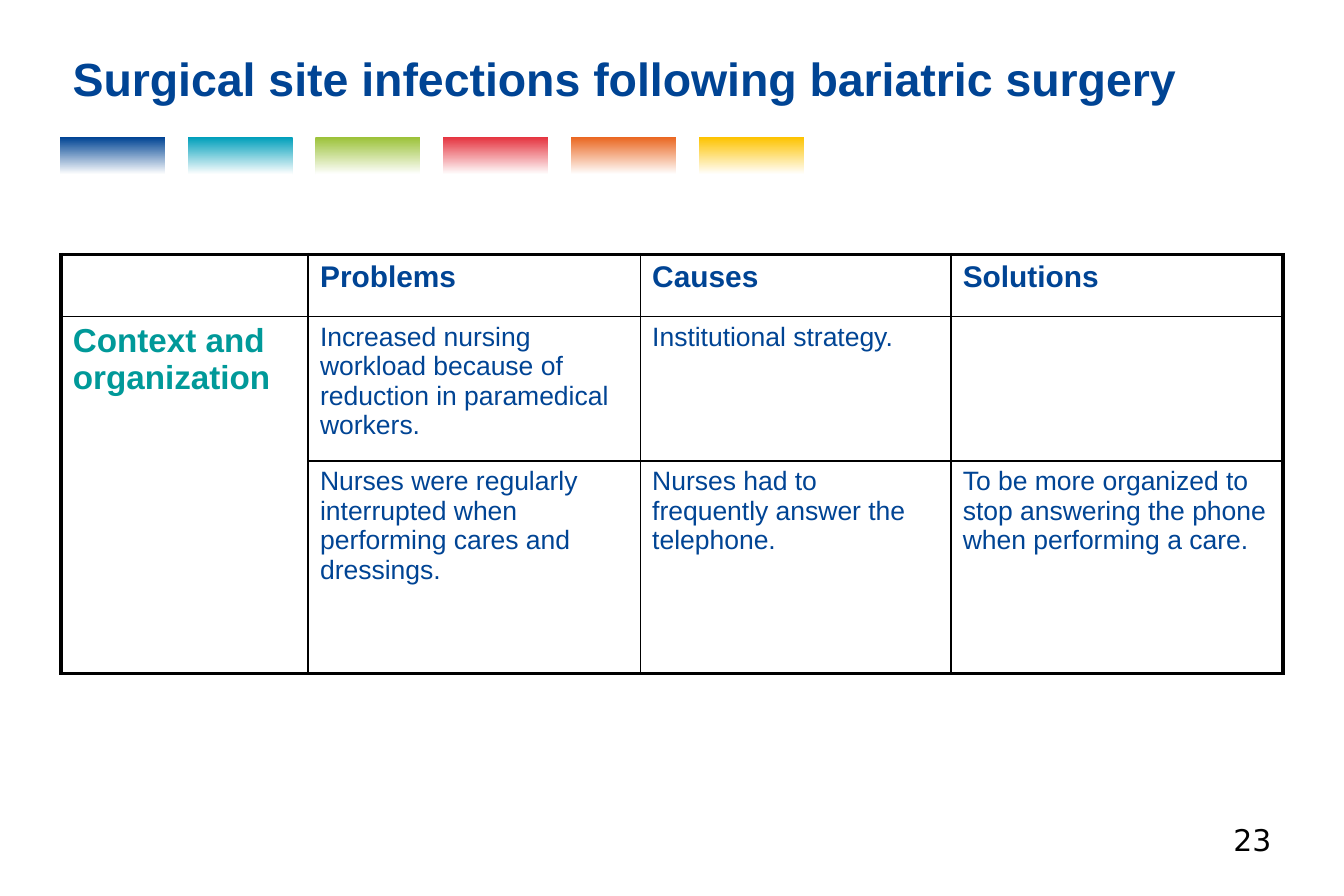
from lxml import etree
from pptx import Presentation
from pptx import util as u
from pptx.dml.color import RGBColor
from pptx.enum import shapes, text
from pptx.oxml import ns

PX = 9144

NAVY = RGBColor(0x00, 0x44, 0x94)
TEAL = RGBColor(0x00, 0x99, 0x99)
CYAN = RGBColor(0x00, 0x9F, 0xBB)
GREEN = RGBColor(0x9C, 0xC2, 0x39)
RED = RGBColor(0xE5, 0x35, 0x40)
ORANGE = RGBColor(0xEA, 0x67, 0x21)
YELLOW = RGBColor(0xFD, 0xC3, 0x00)
BLACK = RGBColor(0, 0, 0)
WHITE = RGBColor(0xFF, 0xFF, 0xFF)

COL_WIDTHS = [207, 278, 260, 278]
ROW_HEIGHTS = [52, 121, 178]
ROWS = [
    ["", "Problems", "Causes", "Solutions"],
    ["Context and organization",
     "Increased nursing workload because of reduction in paramedical workers.",
     "Institutional strategy.",
     ""],
    ["",
     "Nurses were regularly interrupted when performing cares and dressings.",
     "Nurses had to frequently answer the telephone.",
     "To be more organized to stop answering the phone when performing a care."],
]


def px(*lengths):
    return [u.Emu(n * PX) for n in lengths]


def style(p, size, color, bold=False, font="Arial"):
    p.font.name = font
    p.font.size = u.Pt(size)
    p.font.bold = bold
    p.font.color.rgb = color


def add_text(s, box, words, size, color, bold=False, font="Arial",
             align=text.PP_ALIGN.LEFT, anchor=text.MSO_ANCHOR.TOP):
    tf = s.shapes.add_textbox(*px(*box)).text_frame
    tf.word_wrap = True
    tf.vertical_anchor = anchor
    p = tf.paragraphs[0]
    p.text = words
    p.alignment = align
    style(p, size, color, bold, font)


def add_swatch(s, left, color):
    sp = s.shapes.add_shape(shapes.MSO_SHAPE.RECTANGLE, *px(left, 115, 88, 31))
    sp.shadow.inherit = False
    sp.line.fill.background()
    sp.fill.gradient()
    sp.fill.gradient_angle = 270
    for stop, rgb in zip(sp.fill.gradient_stops, (color, WHITE)):
        stop.color.rgb = rgb


def set_border(cell, side, thick):
    tcPr = cell._tc.get_or_add_tcPr()
    width = u.Pt(2.25 if thick else 1)
    ln = etree.SubElement(tcPr, ns.qn("a:ln" + side), w=str(width))
    fill = etree.SubElement(ln, ns.qn("a:solidFill"))
    etree.SubElement(fill, ns.qn("a:srgbClr"), val=str(BLACK))


def cell_style(row, col):
    if row == 0:
        return 18, NAVY, True
    if col == 0:
        return 20, TEAL, True
    return 16, NAVY, False


def add_findings_table(s):
    n_rows, n_cols = len(ROW_HEIGHTS), len(COL_WIDTHS)
    box = px(51, 213, sum(COL_WIDTHS), sum(ROW_HEIGHTS))
    table = s.shapes.add_table(n_rows, n_cols, *box).table
    table.first_row = False
    table.horz_banding = False
    for column, width in zip(table.columns, px(*COL_WIDTHS)):
        column.width = width
    for row, height in zip(table.rows, px(*ROW_HEIGHTS)):
        row.height = height
    table.cell(1, 0).merge(table.cell(2, 0))
    for r, words in enumerate(ROWS):
        for c, word in enumerate(words):
            cell = table.cell(r, c)
            set_border(cell, "L", c == 0)
            set_border(cell, "R", c == n_cols - 1)
            set_border(cell, "T", r == 0)
            set_border(cell, "B", r + cell.span_height == n_rows)
            cell.fill.background()
            p = cell.text_frame.paragraphs[0]
            if word:
                p.text = word
            style(p, *cell_style(r, c))


def main():
    prs = Presentation()
    prs.slide_width, prs.slide_height = px(1125, 750)
    s = prs.slides.add_slide(prs.slide_layouts[6])
    for i, color in enumerate([NAVY, CYAN, GREEN, RED, ORANGE, YELLOW]):
        add_swatch(s, 50 + 107 * i, color)
    add_text(s, (51, 23, 1023, 85),
             "Surgical site infections following bariatric surgery",
             28, NAVY, bold=True, anchor=text.MSO_ANCHOR.MIDDLE)
    add_findings_table(s)
    add_text(s, (859, 683, 215, 50), "23", 18, BLACK,
             font="DejaVu Sans", align=text.PP_ALIGN.RIGHT)
    prs.save("out.pptx")


if __name__ == "__main__":
    main()
